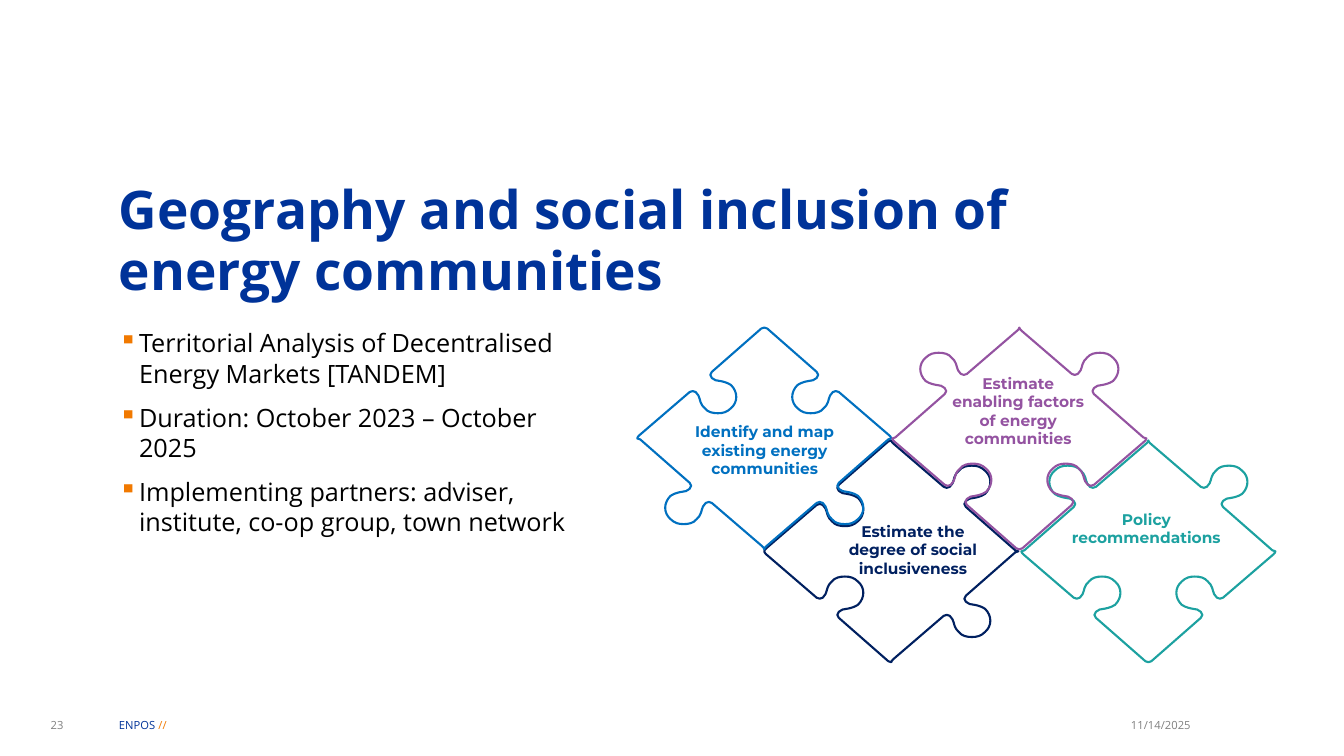
from lxml import etree
from pptx import Presentation
from pptx import util as u
from pptx.dml.color import RGBColor
from pptx.enum import text
from pptx.oxml.ns import qn

PX = 9144  # EMU in one px, 100 px to the inch
COLORS = {
    "title": "003399", "accent": "F17900", "body": "000000", "grey": "808080",
    "blue": "0070C0", "navy": "002060", "plum": "9453A1", "teal": "1CA1A0",
}
LEFT, CENTER, RIGHT = text.PP_ALIGN.LEFT, text.PP_ALIGN.CENTER, text.PP_ALIGN.RIGHT
TOP, MIDDLE, BOTTOM = (text.MSO_ANCHOR.TOP, text.MSO_ANCHOR.MIDDLE,
                       text.MSO_ANCHOR.BOTTOM)

# Puzzle piece: half width, half height, and its upper right side with a notch,
# as a chain of Bezier points around the middle of that side
HALF_W, HALF_H = 126, 110
NOTCH = [
    (-63, -55), (-62, -55), (-61, -55), (-60, -54),
    (-60, -54), (-11, -11), (-11, -11),
    (-9, -9), (-9, -7), (-11, -5), (-13, -3), (-16, -2), (-19, -2),
    (-19, -2), (-26, -1), (-30, 2), (-37, 9), (-37, 19), (-30, 25),
    (-26, 29), (-22, 30), (-17, 30), (-12, 30), (-7, 29), (-4, 25),
    (0, 22), (1, 16), (1, 16), (1, 14), (3, 11), (5, 9),
    (6, 8), (7, 8), (8, 8), (9, 8), (10, 8), (11, 9),
    (11, 9), (61, 52), (61, 52), (62, 53), (63, 54), (63, 55),
]
KNOB = [(-x, -y) for x, y in reversed(NOTCH)]
# Clockwise from the upper right: horizontal and vertical flip
SIDES = [(1, 1), (1, -1), (-1, -1), (-1, 1)]


class Deck:
    def __init__(self, wide, high, face):
        self.prs = Presentation()
        self.prs.slide_width, self.prs.slide_height = wide * PX, high * PX
        self.slide = self.prs.slides.add_slide(self.prs.slide_layouts[6])
        self.face = face

    def color(self, name):
        return RGBColor.from_string(COLORS[name])

    def box(self, area, anchor=TOP, inset=0):
        frame = self.slide.shapes.add_textbox(*(n * PX for n in area)).text_frame
        frame.word_wrap = True
        frame.vertical_anchor = anchor
        frame.margin_left = frame.margin_right = inset * PX
        frame.margin_top = frame.margin_bottom = inset * PX // 2
        return frame

    def style(self, para, size, color=None, bold=False, face=None, align=LEFT):
        para.alignment = align
        font = para.font
        font.name, font.size, font.bold = face or self.face, u.Pt(size), bold
        if color:
            font.color.rgb = self.color(color)

    def line(self, words, area, size, color, anchor=MIDDLE, lead=None, **look):
        para = self.box(area, anchor).paragraphs[0]
        para.text = words
        if lead:
            para.line_spacing = u.Pt(lead)
        self.style(para, size, color, **look)

    def brand(self, parts, area, size):
        para = self.box(area, MIDDLE).paragraphs[0]
        self.style(para, size)
        for words, color in parts:
            run = para.add_run()
            run.text = words
            run.font.color.rgb = self.color(color)

    def bullets(self, items, area, size, indent, gap):
        frame = self.box(area)
        for i, words in enumerate(items):
            para = frame.add_paragraph() if i else frame.paragraphs[0]
            para.text = words
            para.space_after = u.Pt(gap)
            props = para._p.get_or_add_pPr()
            props.set("marL", str(indent * PX))
            props.set("indent", str(-indent * PX))
            tint = etree.SubElement(props, qn("a:buClr"))
            etree.SubElement(tint, qn("a:srgbClr"), val=COLORS["accent"])
            etree.SubElement(props, qn("a:buChar"), char="▪")
            self.style(para, size, "body")

    def piece(self, mid, knobs, color):
        """Outline of a piece; knobs tells for each side if it sticks out."""
        chain = []
        for (flip_x, flip_y), knob in zip(SIDES, knobs):
            side = KNOB if knob else NOTCH
            if flip_x != flip_y:
                side = side[::-1]
            spots = [(mid[0] + flip_x * (HALF_W / 2 + x),
                      mid[1] + flip_y * (y - HALF_H / 2)) for x, y in side]
            chain += spots[1:] if chain else spots
        form = self.slide.shapes.build_freeform(*chain[0], scale=PX)
        form.add_line_segments(chain[1:], close=True)
        shape = form.convert_to_shape()
        shape.shadow.inherit = False
        shape.fill.background()
        shape.line.color.rgb = self.color(color)
        shape.line.width = u.Pt(1.5)
        # Turn each three line points into one curve
        steps = list(shape._element.iter(qn("a:lnTo")))
        for i in range(0, len(steps), 3):
            curve = etree.Element(qn("a:cubicBezTo"))
            steps[i].addprevious(curve)
            for step in steps[i:i + 3]:
                curve.append(step[0])
                step.getparent().remove(step)

    def label(self, words, area, color):
        frame = self.box(area, inset=10)
        frame.auto_size = text.MSO_AUTO_SIZE.SHAPE_TO_FIT_TEXT
        para = frame.paragraphs[0]
        para.text = words
        self.style(para, 11, color, True, "Montserrat", CENTER)


def main():
    deck = Deck(1333, 750, "Open Sans")

    # Footer
    deck.brand([("ENPOS ", "title"), ("//", "accent")], (118, 709, 59, 20), 8)
    deck.line("23", (12, 709, 51, 20), 8, "grey", align=RIGHT)
    deck.line("11/14/2025", (984, 709, 197, 20), 8, "grey", align=RIGHT)

    # Title and facts
    deck.line("Geography and social inclusion of energy communities",
              (118, 220, 1063, 79), 38, "title", BOTTOM, lead=44, bold=True)
    deck.bullets([
        "Territorial Analysis of Decentralised Energy Markets [TANDEM]",
        "Duration: October 2023 – October 2025",
        "Implementing partners: adviser, institute, co-op group, town network",
    ], (118, 325, 477, 283), 18, 20, 10)

    # Puzzle
    for mid, knobs, color in [
        ((884, 547), (1, 1, 0, 0), "navy"),
        ((1139, 547), (1, 0, 0, 1), "teal"),
        ((758, 435), (0, 1, 1, 0), "blue"),
        ((1011, 435), (1, 0, 0, 1), "plum"),
    ]:
        deck.piece(mid, knobs, color)

    # Labels of the pieces
    for words, area, color in [
        ("Identify and map existing energy communities",
         (670, 414, 177, 92), "blue"),
        ("Estimate the degree of social inclusiveness",
         (830, 513, 151, 112), "navy"),
        ("Estimate enabling factors of energy communities",
         (930, 366, 160, 133), "plum"),
        ("Policy recommendations", (1053, 501, 168, 92), "teal"),
    ]:
        deck.label(words, area, color)

    deck.prs.save("out.pptx")


if __name__ == "__main__":
    main()
